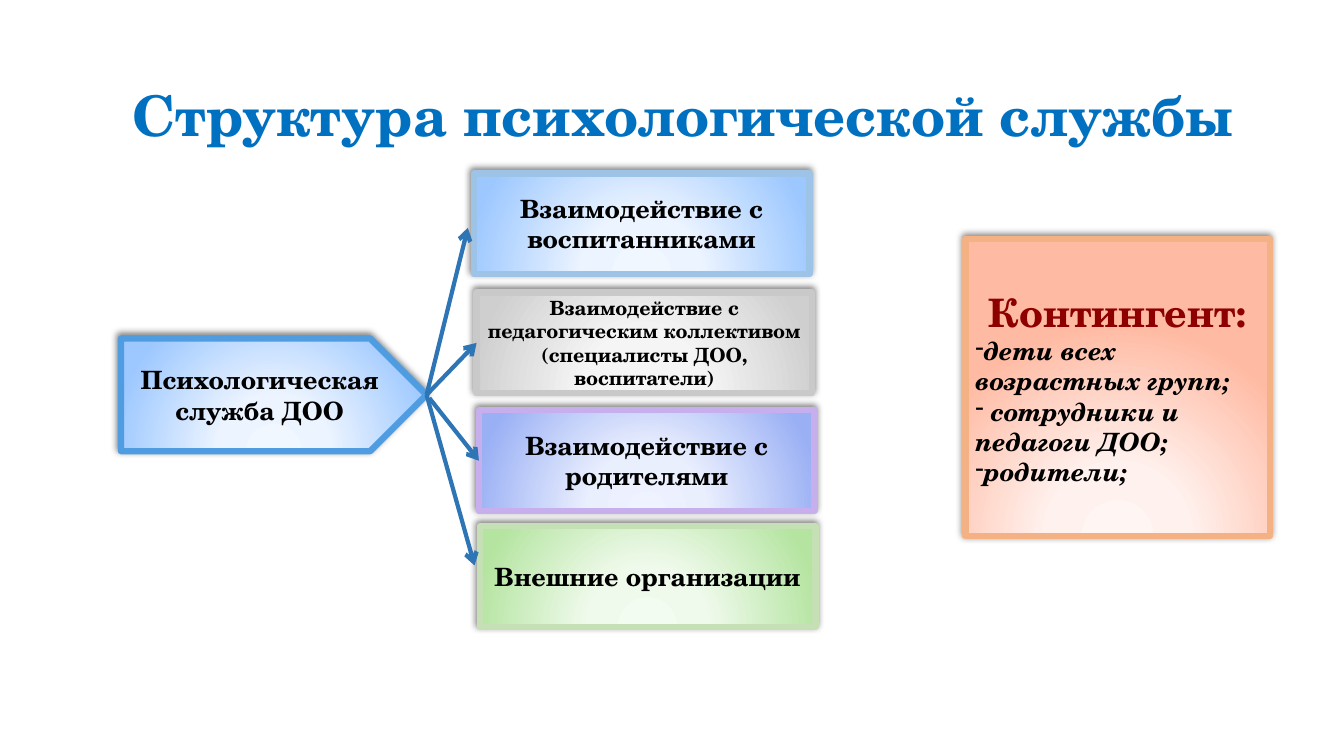
"""Builds the slide on the structure of a kindergarten psychological service."""
import pptx
import pptx.dml.color
import pptx.enum.shapes
import pptx.enum.text
import pptx.oxml
import pptx.oxml.ns
import pptx.util
from lxml import etree

Cm, Pt = pptx.util.Cm, pptx.util.Pt
RGBColor = pptx.dml.color.RGBColor
MSO_SHAPE = pptx.enum.shapes.MSO_SHAPE
PP_ALIGN = pptx.enum.text.PP_ALIGN
MIDDLE = pptx.enum.text.MSO_ANCHOR.MIDDLE
qn = pptx.oxml.ns.qn

FONT = "TeX Gyre Schola"
BLACK = RGBColor(0x00, 0x00, 0x00)
TITLE_BLUE = RGBColor(0x00, 0x70, 0xC0)
ARROW_BLUE = RGBColor(0x2E, 0x75, 0xB6)
DARK_RED = RGBColor(0x8E, 0x00, 0x00)
SERVICE_EDGE = RGBColor(0x4F, 0x9C, 0xE1)
PUPILS_EDGE = RGBColor(0x9D, 0xC3, 0xE6)
STAFF_EDGE = RGBColor(0xC9, 0xC9, 0xC9)
PARENTS_EDGE = RGBColor(0xC7, 0xAE, 0xEC)
PARTNERS_EDGE = RGBColor(0xC5, 0xE0, 0xB4)
AUDIENCE_EDGE = RGBColor(0xF4, 0xB1, 0x83)


def glow(*stops):
    return [RGBColor.from_string(stop) for stop in stops]


BLUE_GLOW = glow("F1F7FF", "ECF4FF", "9DC8FF")
GREY_GLOW = glow("F8F8F8", "F5F5F5", "CFCFCF")
VIOLET_GLOW = glow("EFF3FF", "EAEFFE", "9AB0F5")
GREEN_GLOW = glow("F3FCF0", "F0FAEC", "B4E4A0")
PEACH_GLOW = glow("FFF5F2", "FFF1ED", "FFBAA3")

presentation = pptx.Presentation()
presentation.slide_width, presentation.slide_height = Cm(33.87), Cm(19.05)
slide = presentation.slides.add_slide(presentation.slide_layouts[6])


def add_panel(kind, left, top, width, height, colors, edge, text, size):
    panel = slide.shapes.add_shape(kind, Cm(left), Cm(top), Cm(width), Cm(height))
    panel.line.color.rgb = edge
    panel.line.width = Pt(4.5)
    panel.shadow.inherit = False
    properties = panel._element.spPr
    stops = "".join(f'<a:gs pos="{place}000"><a:srgbClr val="{color}"/></a:gs>'
                    for place, color in zip((0, 34, 100), colors))
    properties.find(qn("a:ln")).addprevious(pptx.oxml.parse_xml(
        f'<a:gradFill {pptx.oxml.ns.nsdecls("a")} rotWithShape="1"><a:gsLst>{stops}</a:gsLst>'
        '<a:path path="circle"><a:fillToRect l="50000" t="155000" r="50000" b="-55000"/>'
        '</a:path></a:gradFill>'))
    shade = etree.SubElement(properties.find(qn("a:effectLst")), qn("a:outerShdw"),
                             blurRad=str(Pt(5)), dist=str(Pt(2)), dir=str(245 * 60000),
                             algn="tl", rotWithShape="0")
    black = etree.SubElement(shade, qn("a:srgbClr"), val=str(BLACK))
    etree.SubElement(black, qn("a:alpha"), val="50000")
    frame = panel.text_frame
    frame.word_wrap = True
    frame.vertical_anchor = MIDDLE
    frame.text = text
    for paragraph in frame.paragraphs:
        paragraph.alignment = PP_ALIGN.CENTER
        for run in paragraph.runs:
            run.font.name, run.font.size, run.font.bold = FONT, Pt(size), True
            run.font.color.rgb = BLACK
    return panel


title = slide.shapes.add_textbox(Cm(1.17), Cm(1.04), Cm(32.08), Cm(3.68)).text_frame
title.word_wrap = True
title.vertical_anchor = MIDDLE
title.text = "Структура психологической службы"
title.paragraphs[0].alignment = PP_ALIGN.CENTER
title_font = title.paragraphs[0].runs[0].font
title_font.name, title_font.size, title_font.bold = FONT, Pt(40), True
title_font.color.rgb = TITLE_BLUE

service = add_panel(MSO_SHAPE.PENTAGON, 3.05, 8.53, 7.7, 2.84, BLUE_GLOW, SERVICE_EDGE,
                    "Психологическая служба ДОО", 18)

directions = [
    (11.94, 4.37, BLUE_GLOW, PUPILS_EDGE, "Взаимодействие с воспитанниками", 18),
    (12.01, 7.37, GREY_GLOW, STAFF_EDGE,
     "Взаимодействие с педагогическим коллективом (специалисты ДОО, воспитатели)", 14),
    (12.07, 10.34, VIOLET_GLOW, PARENTS_EDGE, "Взаимодействие с родителями", 18),
    (12.09, 13.26, GREEN_GLOW, PARTNERS_EDGE, "Внешние организации", 18),
]
pupils, staff, parents, partners = [
    add_panel(MSO_SHAPE.RECTANGLE, left, top, 8.46, 2.54, colors, edge, text, size)
    for left, top, colors, edge, text, size in directions]

arrows = [
    (10.72, 9.93, 11.79, 5.74, service, None),
    (10.72, 9.93, 12.01, 8.64, service, staff),
    (10.82, 10.03, 12.07, 11.61, None, parents),
    (10.72, 9.93, 11.96, 14.25, service, None),
]
for x1, y1, x2, y2, source, target in arrows:
    arrow = slide.shapes.add_connector(pptx.enum.shapes.MSO_CONNECTOR.STRAIGHT,
                                       Cm(x1), Cm(y1), Cm(x2), Cm(y2))
    if source:
        arrow.begin_connect(source, 3)
    if target:
        arrow.end_connect(target, 1)
    arrow.line.color.rgb = ARROW_BLUE
    arrow.line.width = Pt(3)
    outline = arrow._element.spPr.find(qn("a:ln"))
    etree.SubElement(outline, qn("a:tailEnd"), type="arrow")
    etree.SubElement(arrow._element.spPr, qn("a:effectLst"))

audience = add_panel(
    MSO_SHAPE.RECTANGLE, 24.33, 6.02, 7.67, 7.49, PEACH_GLOW, AUDIENCE_EDGE,
    "Контингент:\nдети всех возрастных групп;\n сотрудники и педагоги ДОО;\nродители;", 18)
heading, *groups = audience.text_frame.paragraphs
heading.runs[0].font.size = Pt(28)
heading.runs[0].font.color.rgb = DARK_RED
for group in groups:
    group.alignment = PP_ALIGN.LEFT
    marks = group._p.get_or_add_pPr()
    marks.set("marL", "0")
    marks.set("indent", "0")
    etree.SubElement(marks, qn("a:buFontTx"))
    etree.SubElement(marks, qn("a:buChar"), char="-")
    group.runs[0].font.italic = True

presentation.save("out.pptx")
